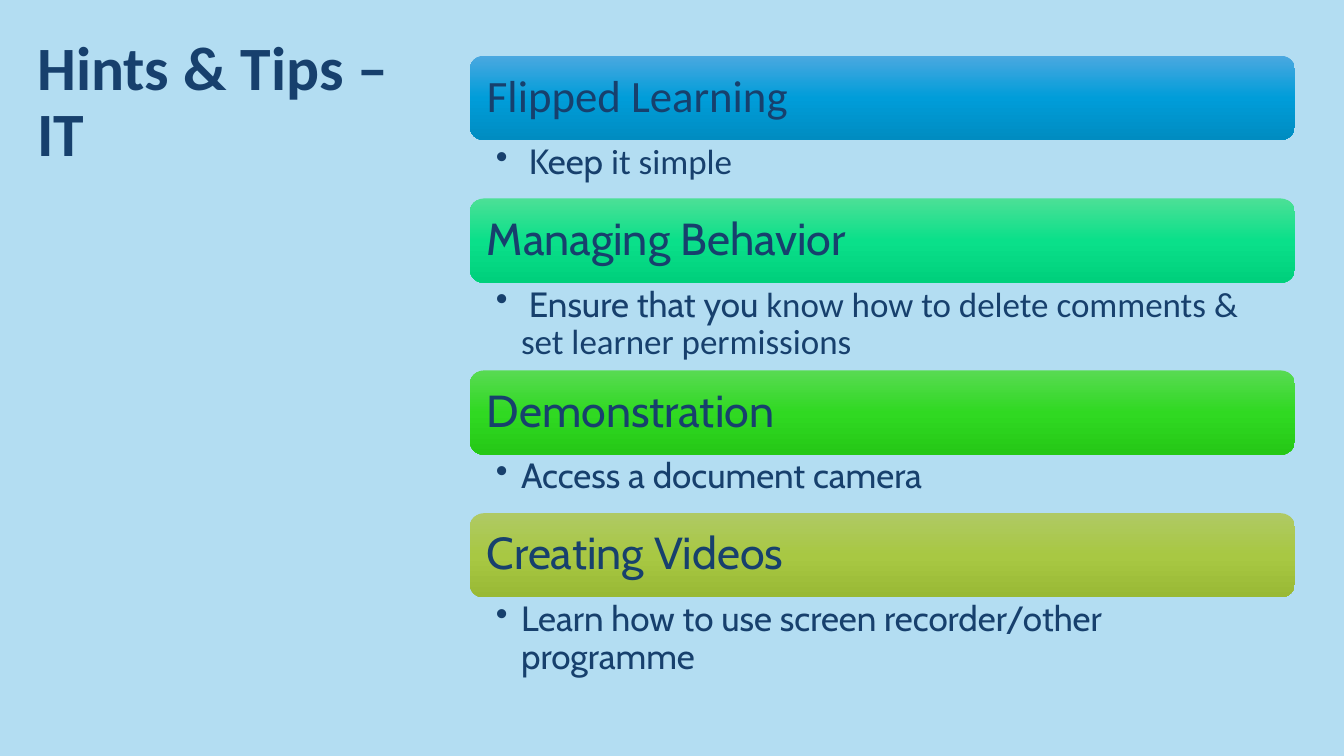
from copy import deepcopy
from dataclasses import dataclass

from lxml import etree
from pptx import Presentation
from pptx.dml.color import RGBColor
from pptx.enum import shapes, text
from pptx.oxml import ns
from pptx.util import Pt

NAVY = RGBColor(0x17, 0x40, 0x6D)
SKY = RGBColor(0xB3, 0xDD, 0xF2)
BLUES = (RGBColor(0x4B, 0xA8, 0xE0), RGBColor(0x00, 0x9D, 0xD9), RGBColor(0x00, 0x8C, 0xC1))
MINTS = (RGBColor(0x4C, 0xE0, 0x96), RGBColor(0x0A, 0xE0, 0x8A), RGBColor(0x00, 0xD0, 0x7C))
GREENS = (RGBColor(0x58, 0xDA, 0x52), RGBColor(0x30, 0xD9, 0x22), RGBColor(0x25, 0xC8, 0x16))
OLIVES = (RGBColor(0xAF, 0xC9, 0x64), RGBColor(0xA8, 0xC8, 0x43), RGBColor(0x99, 0xB9, 0x35))

LIST_LEFT, LIST_TOP, LIST_WIDTH = 335.5, 39.8, 589.5
BAR_HEIGHT = 60.2


@dataclass(frozen=True)
class Tip:
    heading: str
    heading_font: str
    gradient: tuple[RGBColor, ...]
    advice: tuple[tuple[str, str], ...]  # (wording, font) runs
    advice_height: float


TIPS = (
    Tip("Flipped Learning", "Calibri", BLUES,
        ((" Keep", "Cabin"), (" it simple", "Calibri")), 41.8),
    Tip("Managing Behavior ", "Cabin", MINTS,
        ((" Ensure that you ", "Cabin"),
         ("know how to delete comments & set learner permissions", "Calibri")), 62.6),
    Tip("Demonstration", "Cabin", GREENS,
        (("Access a document camera", "Cabin"),), 41.8),
    Tip("Creating Videos", "Cabin", OLIVES,
        (("Learn how to use screen recorder/other programme", "Cabin"),), 61.2),
)


def write(frame, runs, *, size: float, bold: bool = False, bullet: bool = False,
          anchor=text.MSO_ANCHOR.MIDDLE, insets=(7.2, 3.6, 7.2, 3.6)) -> None:
    """Fill a text frame with one paragraph of (wording, font) runs."""
    frame.word_wrap = True
    frame.auto_size = text.MSO_AUTO_SIZE.NONE
    frame.vertical_anchor = anchor
    (frame.margin_left, frame.margin_top,
     frame.margin_right, frame.margin_bottom) = map(Pt, insets)
    paragraph = frame.paragraphs[0]
    paragraph.alignment = text.PP_ALIGN.LEFT
    paragraph.line_spacing = 0.9
    for wording, font in runs:
        run = paragraph.add_run()
        run.text = wording
        run.font.name = font
        run.font.size = Pt(size)
        run.font.bold = bold
        run.font.color.rgb = NAVY
    if bullet:
        paragraph.level = 1
        properties = paragraph._p.get_or_add_pPr()
        properties.set("marL", str(Pt(18)))
        properties.set("indent", str(-Pt(18)))
        etree.SubElement(properties, ns.qn("a:buChar")).set("char", "•")


def shade_downwards(shape, colours: tuple[RGBColor, ...]) -> None:
    shape.fill.gradient()
    shape.fill.gradient_angle = 270
    stop_list = shape.element.spPr.find(".//" + ns.qn("a:gsLst"))
    stop_list.append(deepcopy(stop_list[0]))
    for index, (stop, colour) in enumerate(zip(shape.fill.gradient_stops, colours)):
        stop.position = index / 2
        stop.color.rgb = colour


def add_tip(slide, tip: Tip, top: float) -> float:
    """Draw a heading bar with its advice and return the bottom edge."""
    bar = slide.shapes.add_shape(shapes.MSO_SHAPE.ROUNDED_RECTANGLE, Pt(LIST_LEFT), Pt(top),
                                 Pt(LIST_WIDTH), Pt(BAR_HEIGHT))
    bar.shadow.inherit = False
    bar.line.fill.background()
    shade_downwards(bar, tip.gradient)
    write(bar.text_frame, [(tip.heading, tip.heading_font)], size=32, insets=(9.4,) * 4)

    advice_top = top + BAR_HEIGHT
    advice = slide.shapes.add_textbox(Pt(LIST_LEFT), Pt(advice_top),
                                      Pt(LIST_WIDTH), Pt(tip.advice_height))
    write(advice.text_frame, tip.advice, size=25, bullet=True,
          anchor=text.MSO_ANCHOR.TOP, insets=(18.7, 2.9, 18, 2.9))
    return advice_top + tip.advice_height


def main() -> None:
    deck = Presentation()
    deck.slide_width, deck.slide_height = Pt(960), Pt(540)
    slide = deck.slides.add_slide(deck.slide_layouts[5])
    slide.background.fill.solid()
    slide.background.fill.fore_color.rgb = SKY

    title = slide.shapes.title
    title.left, title.top, title.width, title.height = map(Pt, (19.4, 13, 279.4, 121.7))
    write(title.text_frame, [("Hints & Tips – IT", "Calibri")], size=44, bold=True)

    top = LIST_TOP
    for tip in TIPS:
        top = add_tip(slide, tip, top)
    deck.save("out.pptx")


if __name__ == "__main__":
    main()
